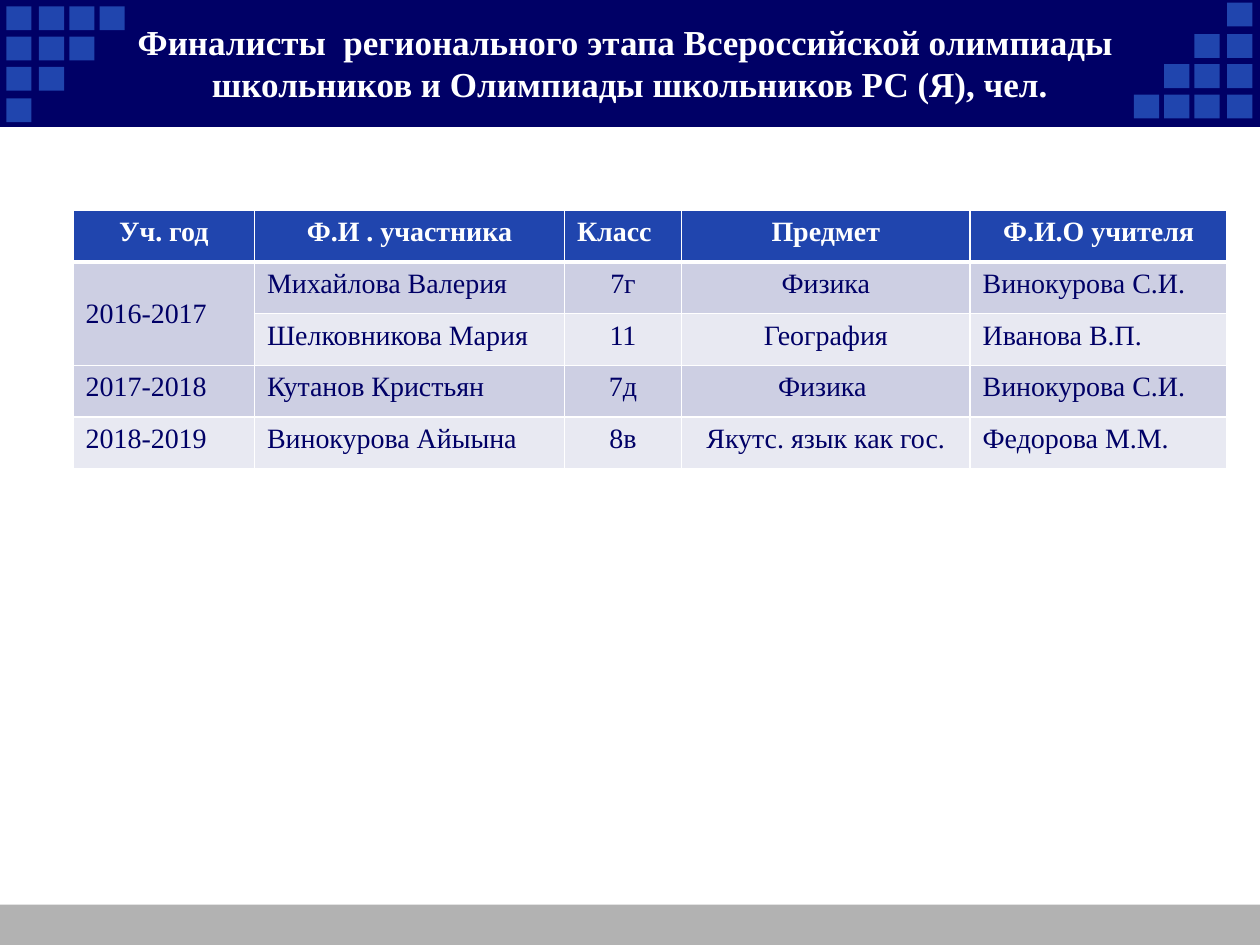
import pptx
import pptx.dml.color
import pptx.enum.shapes
import pptx.enum.text
import pptx.oxml
import pptx.oxml.ns
import pptx.util

Inches = pptx.util.Inches
Pt = pptx.util.Pt
Align = pptx.enum.text.PP_ALIGN
Anchor = pptx.enum.text.MSO_ANCHOR

NAVY, BLUE, GREY, WHITE = "000066", "2045AE", "B2B2B2", "FFFFFF"
BANDS = ("CDCFE3", "E8E9F2")

TITLE = ("Финалисты  регионального этапа Всероссийской олимпиады \n"
         "школьников и Олимпиады школьников РС (Я), чел.")
ROWS = [
    ("Уч. год", "Ф.И . участника", "Класс", "Предмет", "Ф.И.О учителя"),
    ("2016-2017", "Михайлова Валерия", "7г", "Физика", "Винокурова С.И."),
    ("", "Шелковникова Мария", "11", "География", "Иванова В.П."),
    ("2017-2018", "Кутанов Кристьян", "7д", "Физика ", "Винокурова С.И."),
    ("2018-2019", "Винокурова Айыына", "8в", "Якутс. язык как гос.", "Федорова М.М."),
]
WIDTHS = (1.44, 2.46, 0.93, 2.29, 2.04)
HEAD = "cclcc"
BODY = "lclcl".replace("lcl", "llc", 1)
STEPS_X = (0.05, 0.31, 0.55, 0.79)
STEPS_Y = (0.05, 0.29, 0.53, 0.78)


def color(code):
    """Turn a hex string into a colour."""
    return pptx.dml.color.RGBColor.from_string(code)


class Deck:
    """Hold the text style and the current slide."""

    def __init__(self, slide, font="Times New Roman"):
        self.slide = slide
        self.font = font

    def style(self, para, size, code, bold, align):
        para.alignment = Align.CENTER if align == "c" else Align.LEFT
        for run in para.runs:
            run.font.name = self.font
            run.font.size = Pt(size)
            run.font.bold = bold
            run.font.color.rgb = color(code)

    def rect(self, x, y, w, h, fill, line=None):
        kind = pptx.enum.shapes.MSO_SHAPE.RECTANGLE
        box = self.slide.shapes.add_shape(kind, Inches(x), Inches(y), Inches(w), Inches(h))
        box.shadow.inherit = False
        box.fill.solid()
        box.fill.fore_color.rgb = color(fill)
        if line:
            box.line.color.rgb = color(line)
            box.line.width = Pt(0.75)
        else:
            box.line.fill.background()

    def text(self, x, y, w, h, words, size, code):
        box = self.slide.shapes.add_textbox(Inches(x), Inches(y), Inches(w), Inches(h))
        frame = box.text_frame
        frame.word_wrap = True
        frame.vertical_anchor = Anchor.MIDDLE
        para = frame.paragraphs[0]
        para.text = words
        self.style(para, size, code, True, "c")

    def edge(self, cell, top, base):
        props = cell._tc.get_or_add_tcPr()
        sides = (("L", 1), ("R", 1), ("T", top), ("B", base))
        for spot, (side, width) in enumerate(sides):
            props.insert(spot, pptx.oxml.parse_xml(
                f'<a:ln{side} {pptx.oxml.ns.nsdecls("a")} w="{Pt(width)}">'
                f'<a:solidFill><a:srgbClr val="{WHITE}"/></a:solidFill></a:ln{side}>'))

    def table(self, x, y, widths, high, rows):
        grid = self.slide.shapes.add_table(
            len(rows), len(widths), Inches(x), Inches(y),
            Inches(sum(widths)), Inches(high * len(rows))).table
        for col, width in zip(grid.columns, widths):
            col.width = Inches(width)
        for r, row in enumerate(rows):
            grid.rows[r].height = Inches(high)
            head = r == 0
            fill = BLUE if head else BANDS[(r - 1) % 2]
            for c, words in enumerate(row):
                cell = grid.cell(r, c)
                cell.fill.solid()
                cell.fill.fore_color.rgb = color(fill)
                self.edge(cell, 3 if r == 1 else 1, 3 if head else 1)
                cell.text_frame.text = words
                align = (HEAD if head else BODY)[c]
                self.style(cell.text_frame.paragraphs[0], 16,
                           WHITE if head else NAVY, head, align)
        return grid


def main():
    """Build the slide and save it."""
    show = pptx.Presentation()
    show.slide_width, show.slide_height = Inches(10), Inches(7.5)
    deck = Deck(show.slides.add_slide(show.slide_layouts[6]))

    deck.rect(0, 7.18, 10, 0.32, GREY)
    deck.rect(0, 0, 10, 1, NAVY, NAVY)
    for r, y in enumerate(STEPS_Y):
        for x in STEPS_X[:4 - r]:
            deck.rect(x, y, 0.2, 0.19, BLUE)
            deck.rect(9.79 - x, 0.8 - y, 0.2, 0.19, BLUE)

    grid = deck.table(0.58, 1.67, WIDTHS, 0.41, ROWS)
    year = grid.cell(1, 0)
    year.merge(grid.cell(2, 0))
    year.vertical_anchor = Anchor.MIDDLE
    deck.text(0, 0, 10, 1, TITLE, 20, WHITE)
    show.save("out.pptx")


if __name__ == "__main__":
    main()
